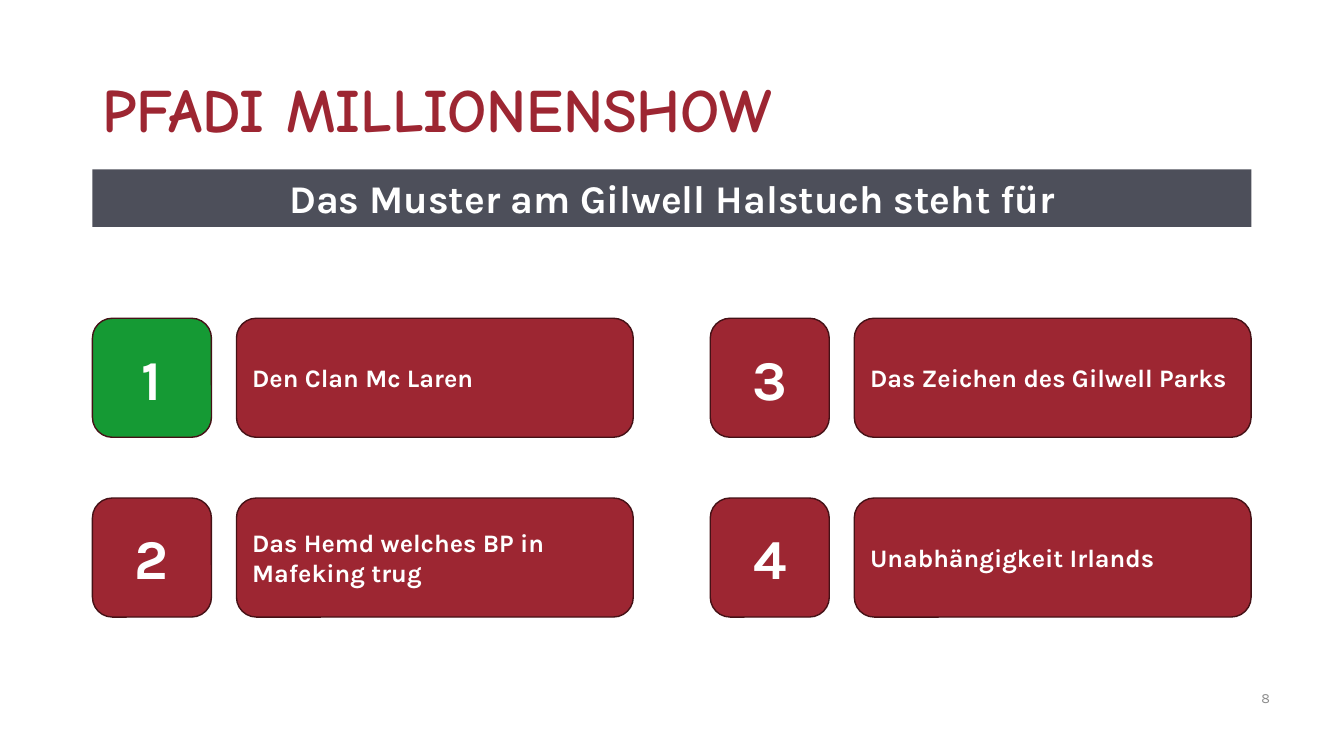
from pptx import Presentation
from pptx.dml.color import RGBColor
from pptx.enum.shapes import MSO_SHAPE
from pptx.enum.text import MSO_ANCHOR, PP_ALIGN
from pptx.util import Cm, Pt

RED, GREEN, GREY, EDGE = "9D2632", "159A34", "4D4F5A", "451116"
WHITE, PALE = "FFFFFF", "8C8C8C"

LEFT, WIDTH = 2.33, 29.21
TILE, ANSWER_W = 3, 10
ANSWER_DX = 3.63
TOP, COL_STEP, ROW_STEP = 8.02, 15.57, 4.53

QUESTION = "Das Muster am Gilwell Halstuch steht für"
ANSWERS = [
    "Den Clan Mc Laren",
    "Das Hemd welches BP in\nMafeking trug",
    "Das Zeichen des Gilwell Parks",
    "Unabhängigkeit Irlands",
]
CORRECT = 1


def rgb(value):
    return RGBColor.from_string(value)


class QuizSlide:
    font = "Karla"

    def __init__(self, prs):
        self.slide = prs.slides.add_slide(prs.slide_layouts[5])

    def set_text(self, sp, text, size, color=WHITE, align=PP_ALIGN.LEFT,
                 anchor=MSO_ANCHOR.MIDDLE, bold=True, name=None, spacing=None):
        tf = sp.text_frame
        tf.word_wrap = True
        tf.vertical_anchor = anchor
        tf.text = text
        style = {"name": name or self.font, "size": Pt(size), "bold": bold}
        for p in tf.paragraphs:
            p.alignment = align
            p.line_spacing = spacing
            for r in p.runs:
                for key, value in style.items():
                    setattr(r.font, key, value)
                r.font.color.rgb = rgb(color)

    def title(self, text, x, y, w, h):
        sp = self.slide.shapes.title
        box = {"left": x, "top": y, "width": w, "height": h}
        for key, value in box.items():
            setattr(sp, key, Cm(value))
        self.set_text(sp, text, 44, RED, name="Comic Neue", spacing=0.9)

    def text(self, text, x, y, w, h, size, **fmt):
        sp = self.slide.shapes.add_textbox(Cm(x), Cm(y), Cm(w), Cm(h))
        self.set_text(sp, text, size, **fmt)

    def box(self, text, x, y, w, h, size, fill, line=None,
            kind=MSO_SHAPE.ROUNDED_RECTANGLE, **fmt):
        sp = self.slide.shapes.add_shape(kind, Cm(x), Cm(y), Cm(w), Cm(h))
        sp.shadow.inherit = False
        sp.fill.solid()
        sp.fill.fore_color.rgb = rgb(fill)
        if line:
            sp.line.color.rgb = rgb(line)
            sp.line.width = Pt(1)
        else:
            sp.line.fill.background()
        self.set_text(sp, text, size, **fmt)


def main():
    prs = Presentation()
    prs.slide_width, prs.slide_height = Cm(33.87), Cm(19.05)
    s = QuizSlide(prs)

    # Title and question
    s.title("PFADI MILLIONENSHOW", LEFT, 1, WIDTH, 3.68)
    s.box(QUESTION, LEFT, 4.27, WIDTH, 1.45, 28, GREY,
          kind=MSO_SHAPE.RECTANGLE, align=PP_ALIGN.CENTER,
          anchor=MSO_ANCHOR.TOP)

    # Answers, numbered down each column
    for i, answer in enumerate(ANSWERS):
        col, row = divmod(i, 2)
        x, y = LEFT + col * COL_STEP, TOP + row * ROW_STEP
        number = i + 1
        s.box(str(number), x, y, TILE, TILE, 40,
              GREEN if number == CORRECT else RED, EDGE,
              align=PP_ALIGN.CENTER)
        s.box(answer, x + ANSWER_DX, y, ANSWER_W, TILE, 18, RED, EDGE)

    # Page number
    s.text("8", LEFT + WIDTH, 17.07, 2.33, 1.02, 10, color=PALE, bold=False)

    prs.save("out.pptx")


if __name__ == "__main__":
    main()
